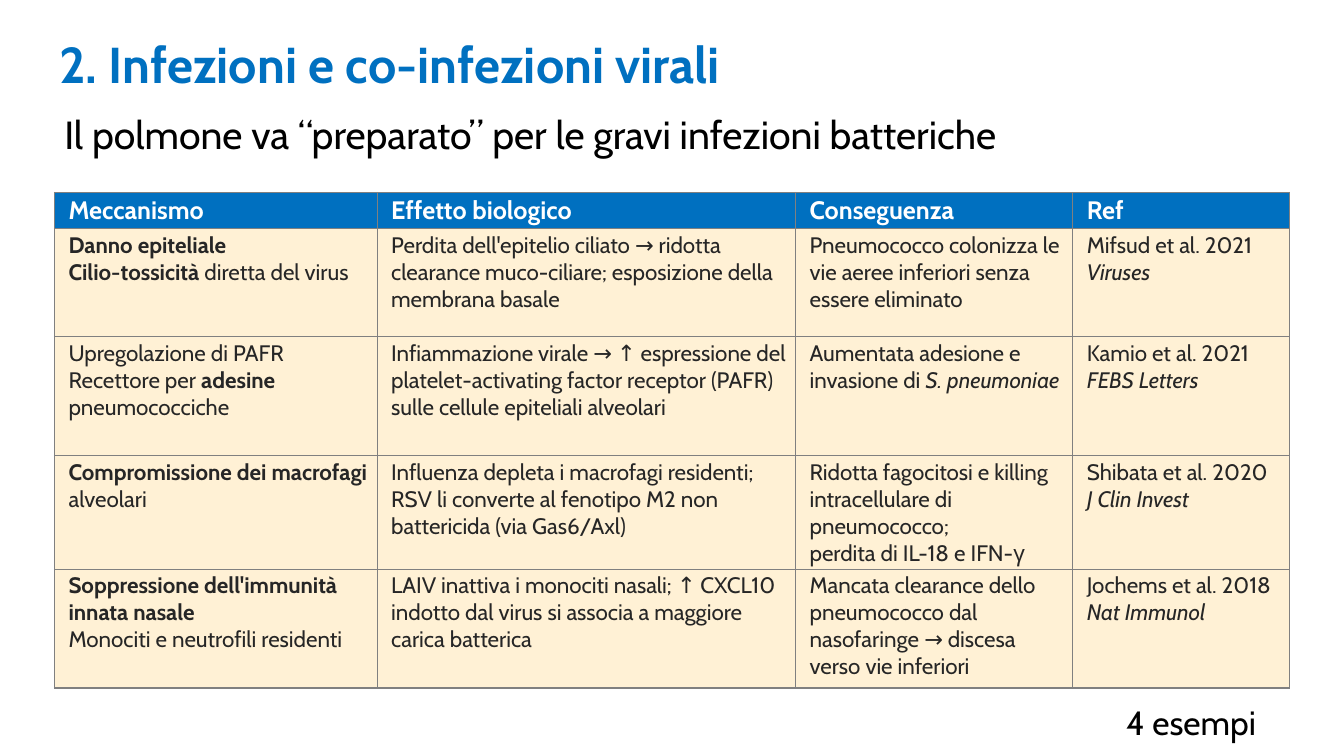
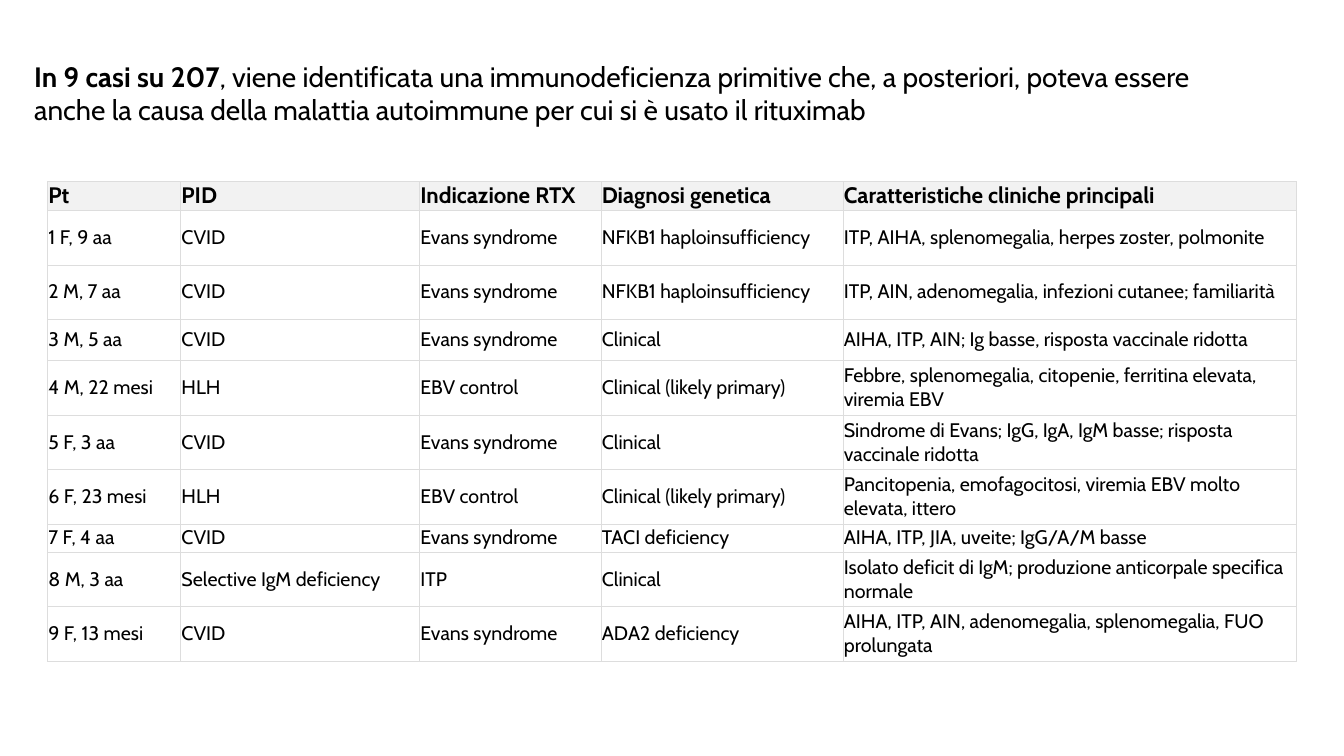
from copy import deepcopy
from dataclasses import dataclass
from typing import NamedTuple

from lxml import etree
from pptx import Presentation
from pptx.dml.color import RGBColor
from pptx.enum.text import MSO_ANCHOR, MSO_AUTO_SIZE
from pptx.oxml.ns import qn
from pptx.slide import Slide
from pptx.table import _Cell
from pptx.text.text import TextFrame
from pptx.util import Emu, Pt

TOP, MIDDLE = MSO_ANCHOR.TOP, MSO_ANCHOR.MIDDLE
GROW = MSO_AUTO_SIZE.SHAPE_TO_FIT_TEXT
EMU_PER_PX = 9144
BLANK_LAYOUT = 6
EDGES = ("a:lnL", "a:lnR", "a:lnT", "a:lnB")


@dataclass(frozen=True)
class Theme:
    """Colours and type sizes shared by the slides."""

    font: str = "Cabin"
    blue: str = "0070C0"
    black: str = "000000"
    white: str = "FFFFFF"
    ink: str = "262626"
    cream: str = "FFF1D5"
    grey: str = "F2F2F2"
    cream_rule: str = "808080"
    pale_rule: str = "DDDDDD"
    title: int = 36
    subtitle: int = 28
    note: int = 24
    lead: int = 20
    heading: int = 18
    body: int = 16
    small: int = 14


THEME = Theme()


class Run(NamedTuple):
    """A stretch of text with its emphasis."""

    text: str
    bold: bool = False
    italic: bool = False


Paragraphs = list[list[Run]]


class Box(NamedTuple):
    """A place on the slide in px."""

    left: int
    top: int
    width: int
    height: int


class TextStyle(NamedTuple):
    """Size and colour of a piece of text."""

    size: int
    color: str


class RowStyle(NamedTuple):
    """Text, fill and anchor of a table row."""

    text: TextStyle
    fill: str | None
    anchor: MSO_ANCHOR


@dataclass(frozen=True)
class Grid:
    """Measures and styles of a table."""

    left: int
    top: int
    columns: list[int]
    rows: list[int]
    head: RowStyle
    body: RowStyle
    rule: str
    rule_width: float
    inset_x: int
    inset_y: int
    indent: int


def px(length: int) -> Emu:
    """Turn px into EMU."""
    return Emu(length * EMU_PER_PX)


def plain(text: str) -> Paragraphs:
    """Make one paragraph without emphasis."""
    return [[Run(text)]]


def strong(text: str) -> Paragraphs:
    """Make one bold paragraph."""
    return [[Run(text, bold=True)]]


def reference(study: str, journal: str) -> Paragraphs:
    """Make a study with its journal in italics below."""
    return [[Run(f"{study}\n"), Run(journal, italic=True)]]


def write(frame: TextFrame, paragraphs: Paragraphs, style: TextStyle, indent: int = 0) -> None:
    """Fill a text frame with styled paragraphs."""
    for index, runs in enumerate(paragraphs):
        paragraph = frame.add_paragraph() if index else frame.paragraphs[0]
        if indent:
            properties = paragraph._p.get_or_add_pPr()
            properties.set("marL", str(px(indent)))
            properties.set("indent", "0")
        for part in runs:
            for line_number, line in enumerate(part.text.split("\n")):
                if line_number:
                    paragraph.add_line_break()
                    paragraph._p[-1].append(deepcopy(run._r.rPr))
                if not line:
                    continue
                run = paragraph.add_run()
                run.text = line
                formats = {"name": THEME.font, "size": Pt(style.size),
                           "bold": part.bold, "italic": part.italic}
                for name, value in formats.items():
                    setattr(run.font, name, value)
                run.font.color.rgb = RGBColor.from_string(style.color)


def add_text(slide: Slide, box: Box, paragraphs: Paragraphs, style: TextStyle, wrap: bool = True) -> None:
    """Place a text box."""
    frame = slide.shapes.add_textbox(*map(px, box)).text_frame
    frame.word_wrap = wrap
    frame.auto_size = GROW
    write(frame, paragraphs, style)


def rule_cell(cell: _Cell, color: str, width: float) -> None:
    """Draw the four borders of a cell."""
    properties = cell._tc.get_or_add_tcPr()
    for position, edge in enumerate(EDGES):
        line = etree.Element(qn(edge), w=str(Pt(width)))
        fill = etree.SubElement(line, qn("a:solidFill"))
        etree.SubElement(fill, qn("a:srgbClr"), val=color)
        properties.insert(position, line)


def add_grid(slide: Slide, grid: Grid, content: list[list[Paragraphs]]) -> None:
    """Place a table with a heading row."""
    box = Box(grid.left, grid.top, sum(grid.columns), sum(grid.rows))
    table = slide.shapes.add_table(len(grid.rows), len(grid.columns), *map(px, box)).table
    table.first_row = table.horz_banding = False
    for column, width in zip(table.columns, grid.columns):
        column.width = px(width)
    for row, height in zip(table.rows, grid.rows):
        row.height = px(height)
    for row_number, entries in enumerate(content):
        style = grid.body if row_number else grid.head
        for column_number, paragraphs in enumerate(entries):
            cell = table.cell(row_number, column_number)
            formats = {"margin_left": px(grid.inset_x), "margin_right": px(grid.inset_x),
                       "margin_top": px(grid.inset_y), "margin_bottom": px(grid.inset_y),
                       "vertical_anchor": style.anchor}
            for name, value in formats.items():
                setattr(cell, name, value)
            if style.fill:
                cell.fill.solid()
                cell.fill.fore_color.rgb = RGBColor.from_string(style.fill)
            else:
                cell.fill.background()
            rule_cell(cell, grid.rule, grid.rule_width)
            write(cell.text_frame, paragraphs, style.text, grid.indent)


MECHANISM_GRID = Grid(
    left=54, top=191, columns=[320, 415, 275, 215], rows=[26, 107, 118, 107, 118],
    head=RowStyle(TextStyle(THEME.heading, THEME.white), THEME.blue, MIDDLE),
    body=RowStyle(TextStyle(THEME.body, THEME.ink), THEME.cream, TOP),
    rule=THEME.cream_rule, rule_width=1, inset_x=4, inset_y=3, indent=10)

MECHANISMS = [
    [strong(name) for name in ("Meccanismo", "Effetto biologico", "Conseguenza", "Ref")],
    [[[Run("Danno epiteliale", bold=True)],
      [Run("Cilio-tossicità", bold=True), Run(" diretta del virus")]],
     plain("Perdita dell'epitelio ciliato → ridotta clearance muco-ciliare; "
           "esposizione della membrana basale"),
     plain("Pneumococco colonizza le vie aeree inferiori senza essere eliminato"),
     reference("Mifsud et al. 2021", "Viruses")],
    [[[Run("Upregolazione di PAFR")],
      [Run("Recettore per "), Run("adesine", bold=True), Run(" pneumococciche")]],
     plain("Infiammazione virale → ↑ espressione del platelet-activating factor "
           "receptor (PAFR) sulle cellule epiteliali alveolari"),
     [[Run("Aumentata adesione e invasione di "), Run("S. pneumoniae ", italic=True)]],
     reference("Kamio et al. 2021", "FEBS Letters")],
    [[[Run("Compromissione dei macrofagi ", bold=True), Run("alveolari")]],
     plain("Influenza depleta i macrofagi residenti; RSV li converte al fenotipo M2 "
           "non battericida (via Gas6/Axl)"),
     plain("Ridotta fagocitosi e killing intracellulare di pneumococco; \n"
           "perdita di IL-18 e IFN-γ"),
     reference("Shibata et al. 2020", "J Clin Invest")],
    [strong("Soppressione dell'immunità innata nasale") + plain("Monociti e neutrofili residenti"),
     plain("LAIV inattiva i monociti nasali; ↑ CXCL10 indotto dal virus si associa "
           "a maggiore carica batterica"),
     plain("Mancata clearance dello pneumococco dal nasofaringe → discesa verso vie inferiori"),
     reference("Jochems et al. 2018", "Nat Immunol")],
]

PATIENT_GRID = Grid(
    left=47, top=180, columns=[132, 237, 180, 240, 450],
    rows=[28, 54, 54, 41, 54, 54, 54, 28, 54, 54],
    head=RowStyle(TextStyle(THEME.body, THEME.black), THEME.grey, MIDDLE),
    body=RowStyle(TextStyle(THEME.small, THEME.black), None, MIDDLE),
    rule=THEME.pale_rule, rule_width=0.3, inset_x=1, inset_y=1, indent=0)

PATIENT_HEADINGS = ("Pt", "PID", "Indicazione RTX", "Diagnosi genetica",
                    "Caratteristiche cliniche principali")
PATIENTS = [
    ("1 F, 9 aa", "CVID", "Evans syndrome", "NFKB1 haploinsufficiency",
     "ITP, AIHA, splenomegalia, herpes zoster, polmonite"),
    ("2 M, 7 aa", "CVID", "Evans syndrome", "NFKB1 haploinsufficiency",
     "ITP, AIN, adenomegalia, infezioni cutanee; familiarità"),
    ("3 M, 5 aa", "CVID", "Evans syndrome", "Clinical",
     "AIHA, ITP, AIN; Ig basse, risposta vaccinale ridotta"),
    ("4 M, 22 mesi", "HLH", "EBV control", "Clinical (likely primary)",
     "Febbre, splenomegalia, citopenie, ferritina elevata, viremia EBV"),
    ("5 F, 3 aa", "CVID", "Evans syndrome", "Clinical",
     "Sindrome di Evans; IgG, IgA, IgM basse; risposta vaccinale ridotta"),
    ("6 F, 23 mesi", "HLH", "EBV control", "Clinical (likely primary)",
     "Pancitopenia, emofagocitosi, viremia EBV molto elevata, ittero"),
    ("7 F, 4 aa", "CVID", "Evans syndrome", "TACI deficiency",
     "AIHA, ITP, JIA, uveite; IgG/A/M basse"),
    ("8 M, 3 aa", "Selective IgM deficiency", "ITP", "Clinical",
     "Isolato deficit di IgM; produzione anticorpale specifica normale"),
    ("9 F, 13 mesi", "CVID", "Evans syndrome", "ADA2 deficiency",
     "AIHA, ITP, AIN, adenomegalia, splenomegalia, FUO prolungata"),
]


def build_infections(slide: Slide) -> None:
    """Build the slide on viral infections."""
    add_text(slide, Box(49, 28, 940, 71), strong("2. Infezioni e co-infezioni virali"),
             TextStyle(THEME.title, THEME.blue))
    add_grid(slide, MECHANISM_GRID, MECHANISMS)
    add_text(slide, Box(54, 105, 1219, 57),
             plain("Il polmone va “preparato” per le gravi infezioni batteriche"),
             TextStyle(THEME.subtitle, THEME.black))
    add_text(slide, Box(1107, 691, 153, 50), plain("4 esempi"),
             TextStyle(THEME.note, THEME.black), wrap=False)


def build_patients(slide: Slide) -> None:
    """Build the slide on the nine patients."""
    headings = [strong(name) for name in PATIENT_HEADINGS]
    add_grid(slide, PATIENT_GRID, [headings] + [list(map(plain, row)) for row in PATIENTS])
    add_text(slide, Box(24, 54, 1210, 77),
             [[Run("In 9 casi su 207", bold=True),
               Run(", viene identificata una immunodeficienza primitive che, a posteriori, "
                   "poteva essere anche la causa della malattia autoimmune per cui si è "
                   "usato il rituximab")]],
             TextStyle(THEME.lead, THEME.black))


def main() -> None:
    """Build and save the presentation."""
    deck = Presentation()
    deck.slide_width, deck.slide_height = px(1333), px(750)
    for build in (build_infections, build_patients):
        build(deck.slides.add_slide(deck.slide_layouts[BLANK_LAYOUT]))
    deck.save("out.pptx")


if __name__ == "__main__":
    main()
